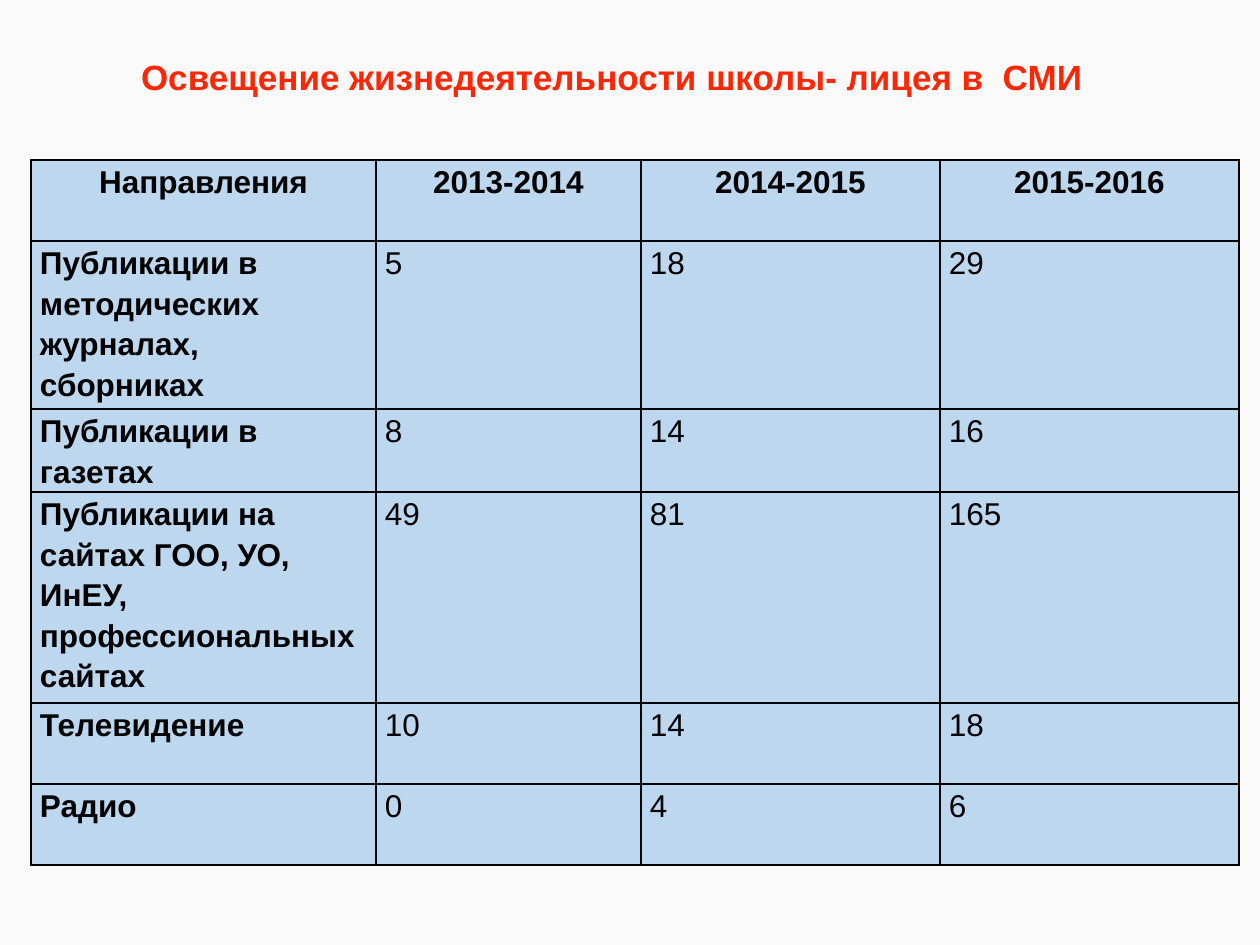
import pptx
import pptx.dml.color
import pptx.enum.text
import pptx.oxml
import pptx.oxml.ns
import pptx.util

PX = 914400 // 126
FONT = "Arial"
COLORS = {"background": "FAFAFA", "title": "FC2704", "cell": "BDD7EE", "ink": "000000"}
CENTER = pptx.enum.text.PP_ALIGN.CENTER
LEFT = pptx.enum.text.PP_ALIGN.LEFT

TITLE = "Освещение жизнедеятельности школы- лицея в  СМИ"
COLUMN_WIDTHS = [345, 265, 299, 299]
ROW_HEIGHTS = [81, 168, 83, 211, 81, 81]
ROWS = [
    ["Направления", "2013-2014", "2014-2015", "2015-2016"],
    ["Публикации в методических журналах, сборниках", "5", "18", "29"],
    ["Публикации в газетах", "8", "14", "16"],
    ["Публикации на сайтах ГОО, УО, ИнЕУ, профессиональных сайтах", "49", "81", "165"],
    ["Телевидение", "10", "14", "18"],
    ["Радио", "0", "4", "6"],
]


def px(length):
    return pptx.util.Emu(length * PX)


def color(name):
    return pptx.dml.color.RGBColor.from_string(COLORS[name])


def add_run(paragraph, text, size, color_name, bold):
    run = paragraph.add_run()
    run.text = text
    run.font.name = FONT
    run.font.size = pptx.util.Pt(size)
    run.font.bold = bold
    run.font.color.rgb = color(color_name)


def add_title(slide, left, top, width, height):
    frame = slide.shapes.add_textbox(px(left), px(top), px(width), px(height)).text_frame
    frame.word_wrap = True
    frame.auto_size = pptx.enum.text.MSO_AUTO_SIZE.SHAPE_TO_FIT_TEXT
    paragraph = frame.paragraphs[0]
    paragraph.alignment = CENTER
    add_run(paragraph, TITLE, 20, "title", True)


def set_borders(cell):
    properties = cell._tc.get_or_add_tcPr()
    for side in ("lnL", "lnR", "lnT", "lnB"):
        properties.append(pptx.oxml.parse_xml(
            f'<a:{side} {pptx.oxml.ns.nsdecls("a")} w="{pptx.util.Pt(1)}"><a:solidFill>'
            f'<a:srgbClr val="{COLORS["ink"]}"/></a:solidFill></a:{side}>'))


def fill_cell(cell, text, alignment, bold):
    set_borders(cell)
    cell.fill.solid()
    cell.fill.fore_color.rgb = color("cell")
    cell.margin_left = cell.margin_right = px(9)
    cell.margin_top = cell.margin_bottom = 0
    paragraph = cell.text_frame.paragraphs[0]
    paragraph.alignment = alignment
    paragraph.line_spacing = 1.15
    add_run(paragraph, text, 18, "ink", bold)


def add_media_table(slide, left, top):
    table = slide.shapes.add_table(
        len(ROWS), len(COLUMN_WIDTHS), px(left), px(top),
        px(sum(COLUMN_WIDTHS)), px(sum(ROW_HEIGHTS))).table
    table.horz_banding = False
    for column, width in zip(table.columns, COLUMN_WIDTHS):
        column.width = px(width)
    for row, height in zip(table.rows, ROW_HEIGHTS):
        row.height = px(height)
    # The header row is centred; header row and first column are bold
    for i, texts in enumerate(ROWS):
        for j, text in enumerate(texts):
            fill_cell(table.cell(i, j), text, CENTER if i == 0 else LEFT, i == 0 or j == 0)


def main():
    presentation = pptx.Presentation()
    presentation.slide_width, presentation.slide_height = px(1260), px(945)
    slide = presentation.slides.add_slide(presentation.slide_layouts[6])

    # Background
    slide.background.fill.solid()
    slide.background.fill.fore_color.rgb = color("background")

    # Table and title
    add_media_table(slide, 31, 160)
    add_title(slide, 64, 49, 1096, 55)

    presentation.save("out.pptx")


if __name__ == "__main__":
    main()
